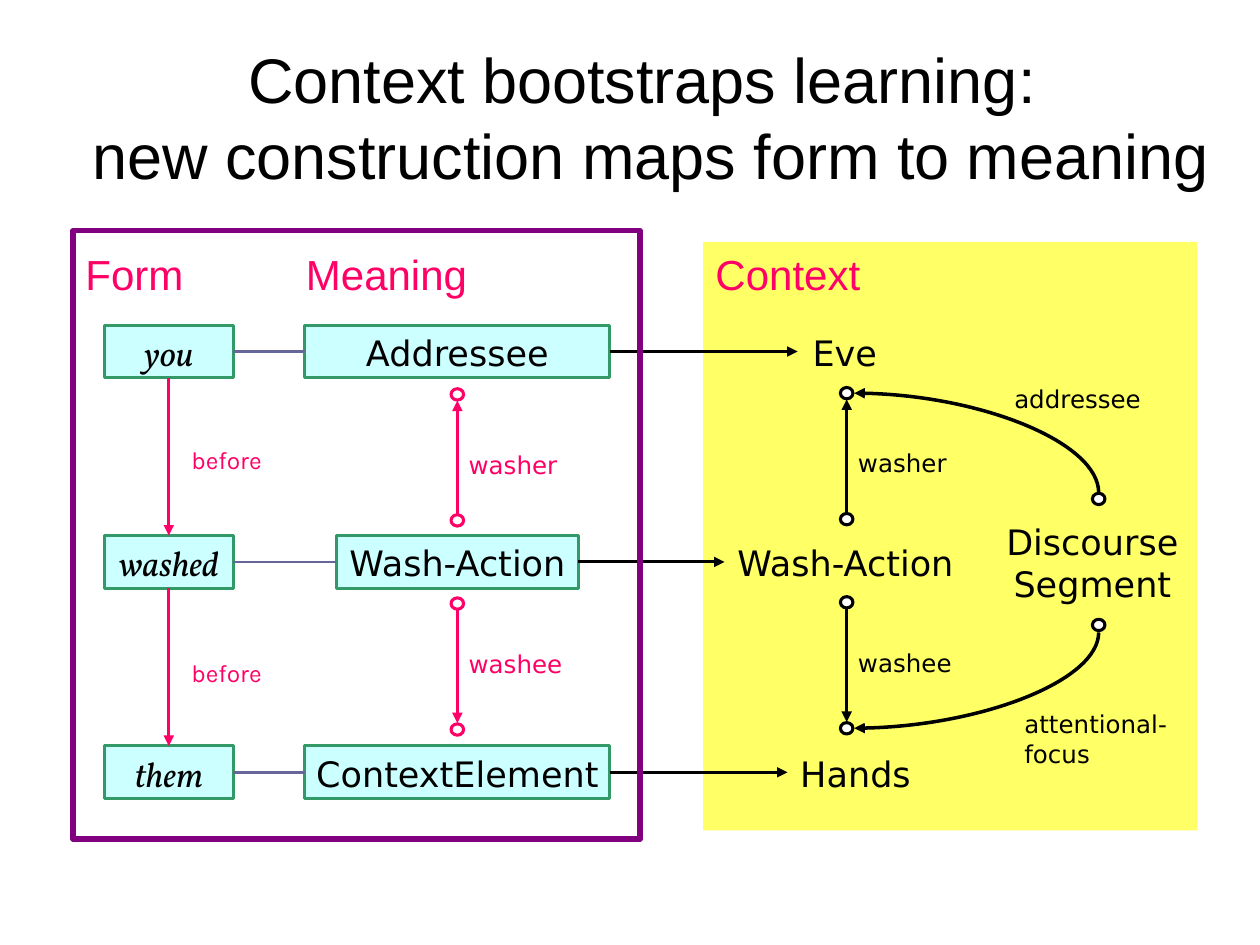
import dataclasses

import lxml.etree
import pptx
import pptx.dml.color
import pptx.enum.shapes
import pptx.enum.text
import pptx.oxml.ns
import pptx.util

Inches = pptx.util.Inches
Shape = pptx.enum.shapes.MSO_SHAPE
Connector = pptx.enum.shapes.MSO_CONNECTOR
Align = pptx.enum.text.PP_ALIGN
Anchor = pptx.enum.text.MSO_ANCHOR
TOP, LEFT, BOTTOM, RIGHT = range(4)


@dataclasses.dataclass(frozen=True)
class Theme:
    black: str = "000000"
    white: str = "FFFFFF"
    pink: str = "FF0066"
    yellow: str = "FFFF66"
    cyan: str = "CCFFFF"
    green: str = "339966"
    slate: str = "666699"
    purple: str = "800080"
    heading_font: str = "Arial"
    concept_font: str = "DejaVu Sans"
    word_font: str = "Vollkorn"
    order_font: str = "Karla"
    title_size: int = 36
    heading_size: int = 24
    concept_size: int = 20
    label_size: int = 14
    thin: float = 1.5
    medium: float = 1.75
    strong: float = 2
    frame: float = 3


def rgb(color):
    return pptx.dml.color.RGBColor.from_string(color)


class Diagram:
    def __init__(self, slide, theme):
        self.shapes = slide.shapes
        self.theme = theme

    def fill_text(self, box, text, font, size, color, align=Align.LEFT,
                  italic=False, inset=0.05, anchor=Anchor.TOP, before=None):
        frame = box.text_frame
        frame.word_wrap = True
        frame.vertical_anchor = anchor
        frame.margin_left = frame.margin_right = Inches(inset)
        frame.margin_top = frame.margin_bottom = Inches(0.05)
        para = frame.paragraphs[0]
        para.text = text
        para.alignment = align
        para.font.name = font
        para.font.size = pptx.util.Pt(size)
        para.font.color.rgb = rgb(color)
        para.font.italic = italic
        if before:
            spacing = lxml.etree.Element(pptx.oxml.ns.qn("a:spcBef"))
            percent = lxml.etree.SubElement(spacing, pptx.oxml.ns.qn("a:spcPct"))
            percent.set("val", str(before * 1000))
            para._p.get_or_add_pPr().insert(0, spacing)

    def text(self, left, top, width, height, text, font, size, color, **style):
        box = self.shapes.add_textbox(*map(Inches, (left, top, width, height)))
        self.fill_text(box, text, font, size, color, **style)
        return box

    def heading(self, left, width, text):
        theme = self.theme
        self.text(left, 1.92, width, 0.5, text, theme.heading_font,
                  theme.heading_size, theme.pink, inset=0.1, before=50)

    def label(self, left, top, text, color, width=1.17, height=0.29):
        theme = self.theme
        self.text(left, top, width, height, text, theme.concept_font,
                  theme.label_size, color)

    def concept(self, left, top, width, text, height=0.42):
        theme = self.theme
        return self.text(left, top, width, height, text, theme.concept_font,
                         theme.concept_size, theme.black, align=Align.CENTER)

    def shape(self, kind, left, top, width, height, fill=None, line=None, weight=1):
        shape = self.shapes.add_shape(kind, *map(Inches, (left, top, width, height)))
        shape.shadow.inherit = False
        if fill:
            shape.fill.solid()
            shape.fill.fore_color.rgb = rgb(fill)
        else:
            shape.fill.background()
        if line:
            shape.line.color.rgb = rgb(line)
            shape.line.width = pptx.util.Pt(weight)
        else:
            shape.line.fill.background()
        return shape

    def node(self, left, top, width, text, font, italic=False):
        theme = self.theme
        box = self.shape(Shape.RECTANGLE, left, top, width, 0.42,
                         theme.cyan, theme.green, theme.medium)
        self.fill_text(box, text, font, theme.concept_size, theme.black,
                       align=Align.CENTER, italic=italic)
        return box

    def dot(self, x, y, color):
        self.shape(Shape.OVAL, x - 0.05, y - 0.045, 0.1, 0.09,
                   self.theme.white, color, self.theme.medium)

    def line(self, start, end, color, weight, arrow="tailEnd", kind=Connector.STRAIGHT):
        line = self.shapes.add_connector(kind, *map(Inches, (*start, *end)))
        line.line.color.rgb = rgb(color)
        line.line.width = pptx.util.Pt(weight)
        if arrow:
            head = lxml.etree.SubElement(line.line._get_or_add_ln(),
                                         pptx.oxml.ns.qn("a:" + arrow))
            head.set("type", "triangle")
        lxml.etree.SubElement(line._element.spPr, pptx.oxml.ns.qn("a:effectLst"))
        return line

    def join(self, first, first_side, second, second_side, color, weight, arrow="tailEnd"):
        line = self.line((0, 0), (1, 1), color, weight, arrow)
        line.begin_connect(first, first_side)
        line.end_connect(second, second_side)

    def curve(self, tip, origin):
        line = self.line(tip, origin, self.theme.black, self.theme.strong,
                         "headEnd", Connector.CURVE)
        line._element.spPr.find(pptx.oxml.ns.qn("a:prstGeom")).set("prst", "curvedConnector2")

    def roles(self, x, top, color):
        for start, end, name, label_top in ((1.0, 0, "washer", 0.39), (1.66, 2.66, "washee", 1.97)):
            step = 0.05 if end > start else -0.05
            self.line((x, top + start + step), (x, top + end - step), color, self.theme.strong)
            self.label(x + 0.04, top + label_top, name, color)
            for offset in (start, end):
                self.dot(x, top + offset, color)


def main():
    deck = pptx.Presentation()
    deck.slide_width, deck.slide_height = Inches(10), Inches(7.5)
    theme = Theme()
    diagram = Diagram(deck.slides.add_slide(deck.slide_layouts[6]), theme)

    diagram.text(0.5, 0.3, 9.33, 1.25,
                 "Context bootstraps learning: \vnew construction maps form to meaning",
                 theme.heading_font, theme.title_size, theme.black,
                 align=Align.CENTER, inset=0.1, anchor=Anchor.MIDDLE)
    diagram.shape(Shape.RECTANGLE, 5.58, 1.92, 3.92, 4.67, theme.yellow)
    for left, width, name in ((0.58, 1.67, "Form"), (2.33, 2.33, "Meaning"), (5.58, 3.92, "Context")):
        diagram.heading(left, width, name)

    rows = (
        ("you", "Addressee", 2.42, "Eve", 6.33, 0.75),
        ("washed", "Wash-Action", 1.92, "Wash-Action", 5.75, 1.92),
        ("them", "ContextElement", 2.42, "Hands", 6.25, 1.08),
    )
    words = []
    for index, (form, meaning, meaning_width, entity, entity_left, entity_width) in enumerate(rows):
        top = 2.58 + index * 1.67
        word = diagram.node(0.83, top, 1.02, form, theme.word_font, italic=True)
        role = diagram.node(3.63 - meaning_width / 2, top, meaning_width, meaning,
                            theme.concept_font)
        target = diagram.concept(entity_left, top, entity_width, entity)
        diagram.join(word, RIGHT, role, LEFT, theme.slate, theme.thin, None)
        diagram.join(role, RIGHT, target, LEFT, theme.black, theme.medium)
        words.append(word)

    for earlier, later, top in zip(words, words[1:], (3.48, 5.17)):
        diagram.join(earlier, BOTTOM, later, TOP, theme.pink, theme.medium)
        diagram.text(1.42, top, 0.83, 0.33, "before", theme.order_font,
                     theme.label_size, theme.pink, inset=0.1, before=50)

    diagram.roles(3.63, 3.13, theme.pink)
    diagram.roles(6.72, 3.12, theme.black)

    diagram.concept(7.92, 4.08, 1.5, "Discourse Segment", 0.75)
    for tip_y, origin_y, dot_y in ((3.12, 3.91, 3.96), (5.78, 5.02, 4.96)):
        diagram.curve((6.78, tip_y), (8.72, origin_y))
        diagram.dot(8.72, dot_y, theme.black)
    diagram.label(8, 3, "addressee", theme.black)
    diagram.label(8.08, 5.58, "attentional-focus", theme.black, 1.25, 0.5)

    diagram.shape(Shape.RECTANGLE, 0.58, 1.83, 4.5, 4.83, None, theme.purple, theme.frame)
    deck.save("out.pptx")


if __name__ == "__main__":
    main()
